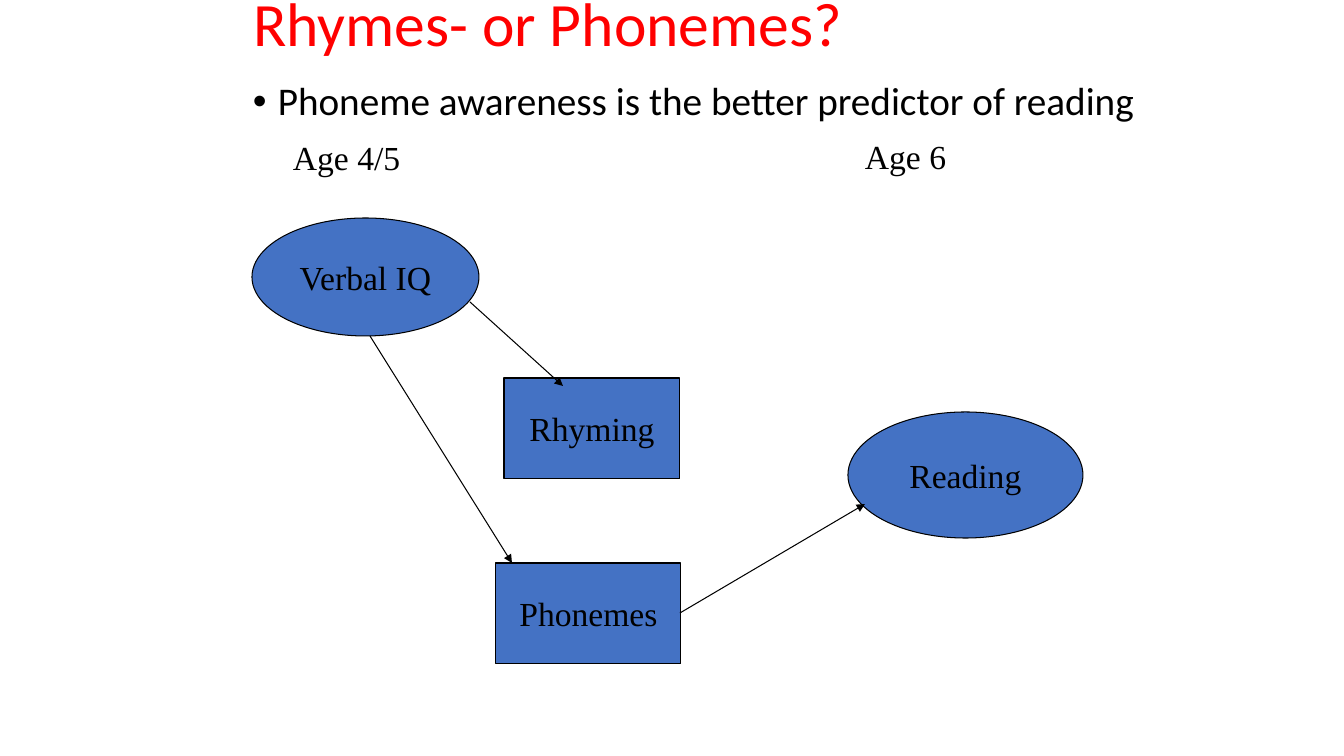
from lxml import etree
from pptx import Presentation
from pptx import util as u
from pptx.dml.color import RGBColor
from pptx.enum import shapes, text
from pptx.oxml import ns

COLOURS = {"title": "FF0000", "ink": "000000", "node": "4472C4"}
SLIDE_SIZE = (1344, 756)
TITLE = ("Rhymes- or Phonemes?", (243, -42, 757, 137))
FINDING = ("Phoneme awareness is the better predictor of reading", (243, 77, 950, 572))
BULLET_INDENT = 25
AGES = [
    ("Age 4/5", (283, 132, 128, 50), 0),
    ("Age 6", (754, 131, 205, 50), 101),
]
OVAL, RECTANGLE = shapes.MSO_SHAPE.OVAL, shapes.MSO_SHAPE.RECTANGLE
NODES = [
    ("Verbal IQ", OVAL, (252, 218, 227, 118)),
    ("Rhyming", RECTANGLE, (504, 378, 176, 101)),
    ("Phonemes", RECTANGLE, (496, 563, 185, 101)),
    ("Reading", OVAL, (848, 412, 235, 126)),
]
ARROWS = [
    (470, 302, 563, 386),
    (370, 336, 512, 563),
    (680, 613, 865, 504),
]

TITLE_FONT = {"name": "Calibri", "size": u.Pt(44)}
FINDING_FONT = {"name": "Calibri", "size": u.Pt(28)}
LABEL_FONT = {"name": "Times New Roman", "size": u.Pt(24)}
TIGHT = {"line_spacing": 0.9}
BULLETED = {"line_spacing": 0.9, "space_before": u.Pt(10)}
CENTRED = {"alignment": text.PP_ALIGN.CENTER}
MIDDLE = {"word_wrap": False, "vertical_anchor": text.MSO_ANCHOR.MIDDLE}


def px(length):
    return round(length * 914400 / 100.8)


def set_values(target, values):
    for name, value in values.items():
        setattr(target, name, value)


def place(shape, area):
    set_values(shape, dict(zip(("left", "top", "width", "height"), map(px, area))))


def write(shape, words, font, colour, frame_format, para_format):
    set_values(shape.text_frame, frame_format)
    para = shape.text_frame.paragraphs[0]
    set_values(para, para_format)
    span = para.add_run()
    span.text = words
    set_values(span.font, font)
    span.font.color.rgb = RGBColor.from_string(COLOURS[colour])
    return para


def indent(para, left, first=0):
    properties = para._p.get_or_add_pPr()
    properties.set("marL", str(px(left)))
    properties.set("indent", str(px(first)))
    return properties


def ink_line(line):
    line.color.rgb = RGBColor.from_string(COLOURS["ink"])
    line.width = u.Pt(0.75)


def add_text(page, words, area, font, wrap, para_format):
    box = page.shapes.add_textbox(*map(px, area))
    return write(box, words, font, "ink", {"word_wrap": wrap}, para_format)


def add_node(page, words, kind, area):
    node = page.shapes.add_shape(kind, *map(px, area))
    node.shadow.inherit = False
    node.fill.solid()
    node.fill.fore_color.rgb = RGBColor.from_string(COLOURS["node"])
    ink_line(node.line)
    write(node, words, LABEL_FONT, "ink", MIDDLE, CENTRED)


def add_arrow(page, ends):
    arrow = page.shapes.add_connector(shapes.MSO_CONNECTOR.STRAIGHT, *map(px, ends))
    ink_line(arrow.line)
    head = etree.SubElement(arrow.line._get_or_add_ln(), ns.qn("a:tailEnd"))
    head.set("type", "triangle")
    etree.SubElement(arrow._element.spPr, ns.qn("a:effectLst"))


def main():
    deck = Presentation()
    deck.slide_width, deck.slide_height = map(px, SLIDE_SIZE)
    page = deck.slides.add_slide(deck.slide_layouts[5])

    words, area = TITLE
    title = page.shapes.title
    place(title, area)
    left_aligned = {**TIGHT, "alignment": text.PP_ALIGN.LEFT}
    write(title, words, TITLE_FONT, "title", {**MIDDLE, "word_wrap": True}, left_aligned)

    finding = add_text(page, *FINDING, FINDING_FONT, True, BULLETED)
    properties = indent(finding, BULLET_INDENT, -BULLET_INDENT)
    etree.SubElement(properties, ns.qn("a:buFont")).set("typeface", "Arial")
    etree.SubElement(properties, ns.qn("a:buChar")).set("char", "•")

    for words, area, left in AGES:
        indent(add_text(page, words, area, LABEL_FONT, False, {}), left)
    for node in NODES:
        add_node(page, *node)
    for ends in ARROWS:
        add_arrow(page, ends)

    deck.save("out.pptx")


if __name__ == "__main__":
    main()
